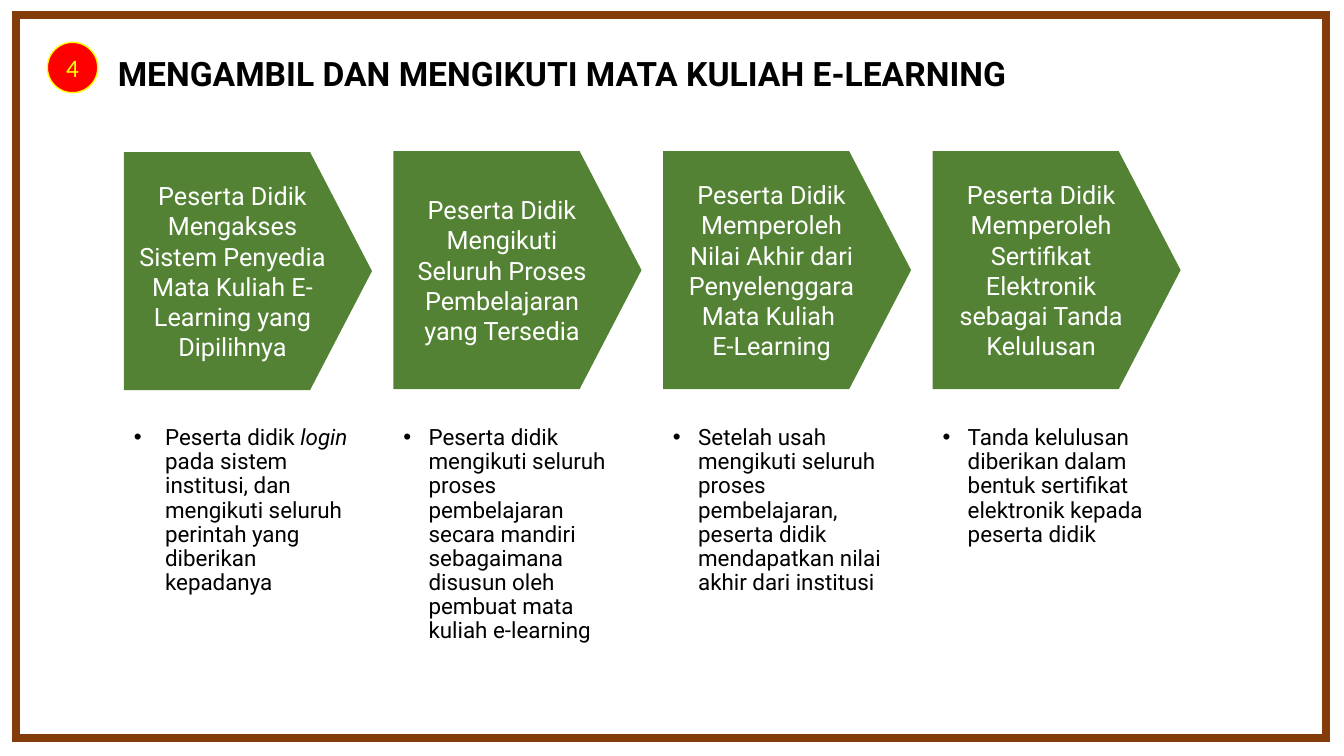
from dataclasses import dataclass

from lxml.etree import SubElement as Sub
from pptx import Presentation
from pptx.dml.color import RGBColor as Rgb
from pptx.enum.shapes import MSO_SHAPE as Kind
from pptx.enum.text import MSO_ANCHOR as Anchor, PP_ALIGN as Align
from pptx.oxml.ns import qn
from pptx.util import Inches, Pt

HUES = {"red": "FF0000", "gold": "FFFF00", "brown": "843C0B",
        "green": "548235", "white": "FFFFFF", "black": "000000"}
FONT = "Roboto"
LEFT, WIDE, LAST = 1.23, 2.46, 9.25


@dataclass
class Step:
    heads: list[str]
    notes: list[str]
    top: float = 1.5
    dent: float = 0.25


STEPS = [
    Step(["Peserta Didik Mengakses Sistem Penyedia Mata Kuliah E-Learning yang Dipilihnya"],
         ["Peserta didik ", "login ",
          "pada sistem institusi, dan mengikuti seluruh perintah yang diberikan kepadanya"],
         top=1.51, dent=0.31),
    Step(["Peserta Didik Mengikuti Seluruh Proses Pembelajaran yang Tersedia"],
         ["Peserta didik mengikuti seluruh proses pembelajaran secara mandiri "
          "sebagaimana disusun oleh pembuat mata kuliah e-learning"]),
    Step(["Peserta Didik Memperoleh Nilai Akhir dari Penyelenggara Mata Kuliah ", "E-Learning"],
         ["Setelah usah mengikuti seluruh proses pembelajaran, "
          "peserta didik mendapatkan nilai akhir dari institusi"]),
    Step(["Peserta Didik Memperoleh Sertifikat Elektronik sebagai Tanda Kelulusan"],
         ["Tanda kelulusan diberikan dalam bentuk sertifikat elektronik kepada peserta didik"]),
]


def tint(name: str) -> Rgb:
    return Rgb.from_string(HUES[name])


def style(para, size: float, hue: str, face: str = FONT) -> None:
    para.font.size = Pt(size)
    para.font.name = face
    para.font.color.rgb = tint(hue)


def shape(slide, kind, box: tuple, fill: str = "", line: str = "", width: float = 1):
    item = slide.shapes.add_shape(kind, *map(Inches, box))
    item.shadow.inherit = False
    if fill:
        item.fill.solid()
        item.fill.fore_color.rgb = tint(fill)
    else:
        item.fill.background()
    if line:
        item.line.color.rgb = tint(line)
        item.line.width = Pt(width)
    else:
        item.line.fill.background()
    return item


def label(item, lines: list[str], hue: str, face: str = FONT) -> None:
    frame = item.text_frame
    frame.word_wrap = True
    frame.vertical_anchor = Anchor.MIDDLE
    frame.text = "\n".join(lines)
    for para in frame.paragraphs:
        para.alignment = Align.CENTER
        style(para, 18, hue, face)


def bullet(para, dent: float) -> None:
    props = para._p.get_or_add_pPr()
    props.set("marL", str(Inches(dent)))
    props.set("indent", str(-Inches(dent)))
    Sub(props, qn("a:buFont"), typeface="Arial")
    Sub(props, qn("a:buChar"), char="•")


def draw(slide, step: Step, left: float) -> None:
    arrow = shape(slide, Kind.PENTAGON, (left, step.top, WIDE, 2.36), "green")
    arrow.adjustments[0] = 0.26
    label(arrow, step.heads, "white")

    frame = slide.shapes.add_textbox(*map(Inches, (left, 4.18, WIDE, 2.58))).text_frame
    frame.word_wrap = True
    para = frame.paragraphs[0]
    bullet(para, step.dent)
    para.line_spacing = 0.9
    style(para, 16, "black")
    for part in step.notes:
        run = para.add_run()
        run.text = part
        if part == "login ":
            run.font.italic = True


def main() -> None:
    deck = Presentation()
    deck.slide_width, deck.slide_height = Inches(13.33), Inches(7.5)
    slide = deck.slides.add_slide(deck.slide_layouts[6])

    badge = shape(slide, Kind.OVAL, (0.47, 0.42, 0.5, 0.5), "red", "gold")
    label(badge, ["4"], "gold", "Calibri")

    title = slide.shapes.add_textbox(*map(Inches, (1.07, 0.48, 9.04, 0.5))).text_frame
    title.word_wrap = False
    title.text = "MENGAMBIL DAN MENGIKUTI MATA KULIAH E-LEARNING"
    style(title.paragraphs[0], 24, "black")
    title.paragraphs[0].font.bold = True

    border = shape(slide, Kind.RECTANGLE, (0.16, 0.15, 12.99, 7.17), line="brown", width=6)
    Sub(border.line._get_or_add_ln(), qn("a:miter"), lim="800000")

    pitch = (LAST - LEFT) / (len(STEPS) - 1)
    for rank, step in enumerate(STEPS):
        draw(slide, step, LEFT + rank * pitch)

    deck.save("out.pptx")


if __name__ == "__main__":
    main()
